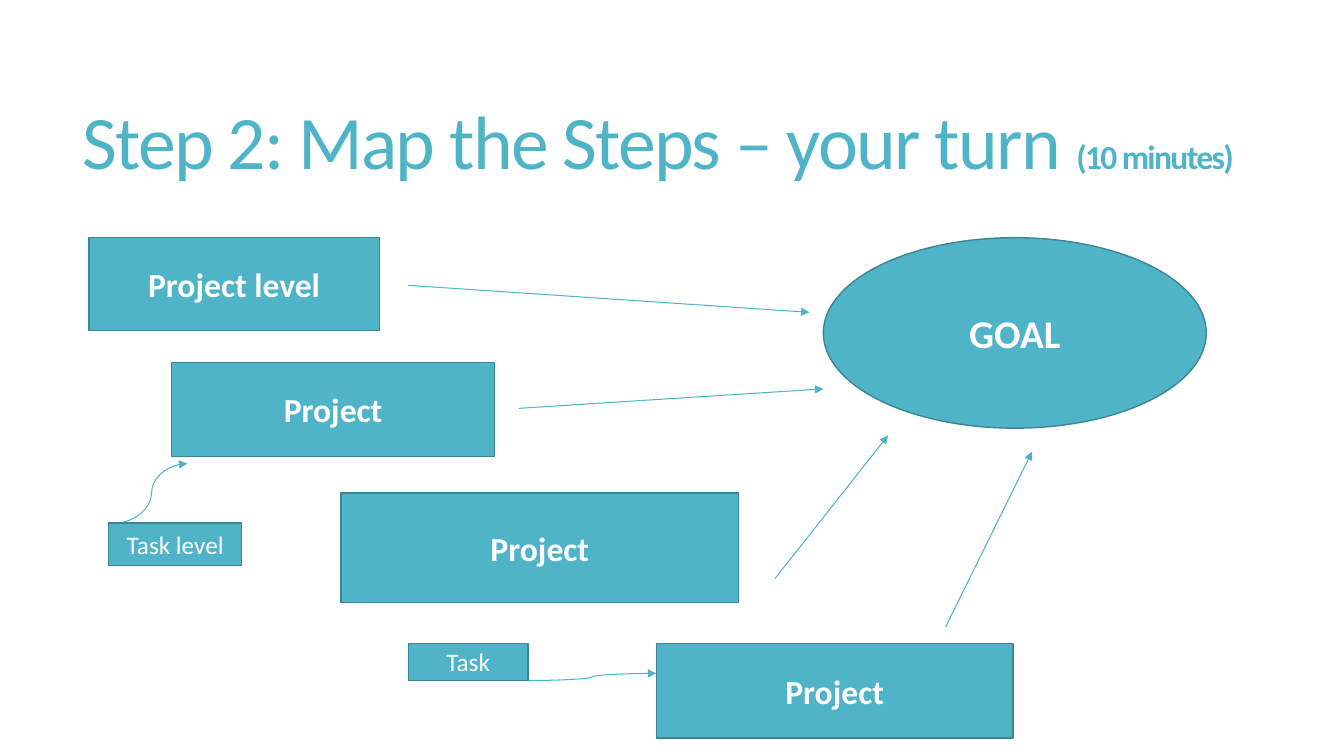
from dataclasses import dataclass

from lxml import etree
from pptx import Presentation
from pptx.dml.color import RGBColor
from pptx.enum.shapes import MSO_CONNECTOR as Connector, MSO_SHAPE as Preset
from pptx.enum.text import MSO_ANCHOR as Anchor, PP_ALIGN as Align
from pptx.oxml.ns import qn
from pptx.util import Cm, Pt


@dataclass(frozen=True)
class Theme:
    font: str = "Calibri"
    accent: str = "50B4C8"
    outline: str = "3B8594"
    light: str = "FFFFFF"
    title_size: float = 54
    goal_size: float = 28
    project_size: float = 24
    task_size: float = 18
    outline_width: float = 1
    arrow_width: float = 0.75


def add_run(paragraph, text, *, font, size, color, bold=False, spacing=0):
    run = paragraph.add_run()
    run.text = text
    run.font.name = font
    run.font.size = Pt(size)
    run.font.bold = bold
    run.font.color.rgb = RGBColor.from_string(color)
    if spacing:
        run._r.get_or_add_rPr().set("spc", str(round(spacing * 100)))


class StepMap:
    def __init__(self, slide, theme):
        self.slide = slide
        self.theme = theme

    def title(self, text, note, left, top, width, height):
        theme = self.theme
        shape = self.slide.shapes.add_textbox(Cm(left), Cm(top), Cm(width), Cm(height))
        frame = shape.text_frame
        frame.word_wrap = True
        frame.vertical_anchor = Anchor.MIDDLE
        paragraph = frame.paragraphs[0]
        paragraph.line_spacing = 0.85
        style = dict(font=theme.font, color=theme.accent, spacing=-1.2)
        add_run(paragraph, text, size=theme.title_size, **style)
        add_run(paragraph, note, size=theme.project_size, bold=True, **style)

    def node(self, text, left, top, width, height, *, size, bold=True, preset=Preset.RECTANGLE):
        theme = self.theme
        shape = self.slide.shapes.add_shape(preset, Cm(left), Cm(top), Cm(width), Cm(height))
        shape.shadow.inherit = False
        shape.fill.solid()
        shape.fill.fore_color.rgb = RGBColor.from_string(theme.accent)
        shape.line.color.rgb = RGBColor.from_string(theme.outline)
        shape.line.width = Pt(theme.outline_width)
        frame = shape.text_frame
        frame.word_wrap = True
        frame.vertical_anchor = Anchor.MIDDLE
        paragraph = frame.paragraphs[0]
        paragraph.alignment = Align.CENTER
        add_run(paragraph, text, font=theme.font, size=size, color=theme.light, bold=bold)

    def arrow(self, start, end, kind=Connector.STRAIGHT):
        theme = self.theme
        ends = [Cm(value) for value in (*start, *end)]
        connector = self.slide.shapes.add_connector(kind, *ends)
        connector.line.color.rgb = RGBColor.from_string(theme.accent)
        connector.line.width = Pt(theme.arrow_width)
        line = connector.line._get_or_add_ln()
        etree.SubElement(line, qn("a:tailEnd"), type="triangle")
        etree.SubElement(connector._element.spPr, qn("a:effectLst"))


def main():
    presentation = Presentation()
    presentation.slide_width = Cm(33.87)
    presentation.slide_height = Cm(19.05)
    slide = presentation.slides.add_slide(presentation.slide_layouts[6])
    theme = Theme()
    step_map = StepMap(slide, theme)

    step_map.title("Step 2: Map the Steps – your turn ", "(10 minutes)", 1.83, 1.4, 29.92, 4.6)

    projects = [
        ("Project level", 2.24, 5.99, 7.32, 2.34),
        ("Project", 4.32, 9.14, 8.15, 2.36),
        ("Project", 8.59, 12.42, 10.03, 2.77),
        ("Project", 16.54, 16.21, 8.99, 2.39),
    ]
    for project in projects:
        step_map.node(*project, size=theme.project_size)
    step_map.node("GOAL", 20.75, 5.99, 9.65, 4.8, size=theme.goal_size, preset=Preset.OVAL)

    goal_arrows = [
        ((19.53, 14.58), (22.38, 10.97)),
        ((10.29, 7.19), (20.4, 7.87)),
        ((13.08, 10.29), (20.75, 9.8)),
        ((23.83, 15.8), (26.01, 11.38)),
    ]
    for start, end in goal_arrows:
        step_map.arrow(start, end)

    tasks = [
        (("Task level", 2.74, 13.18, 3.35, 1.07), (2.92, 13.18), (4.72, 11.68)),
        (("Task", 10.29, 16.21, 3.02, 0.94), (13.31, 17.15), (16.54, 16.97)),
    ]
    for task, start, end in tasks:
        step_map.arrow(start, end, Connector.CURVE)
        step_map.node(*task, size=theme.task_size, bold=False)

    presentation.save("out.pptx")


if __name__ == "__main__":
    main()
